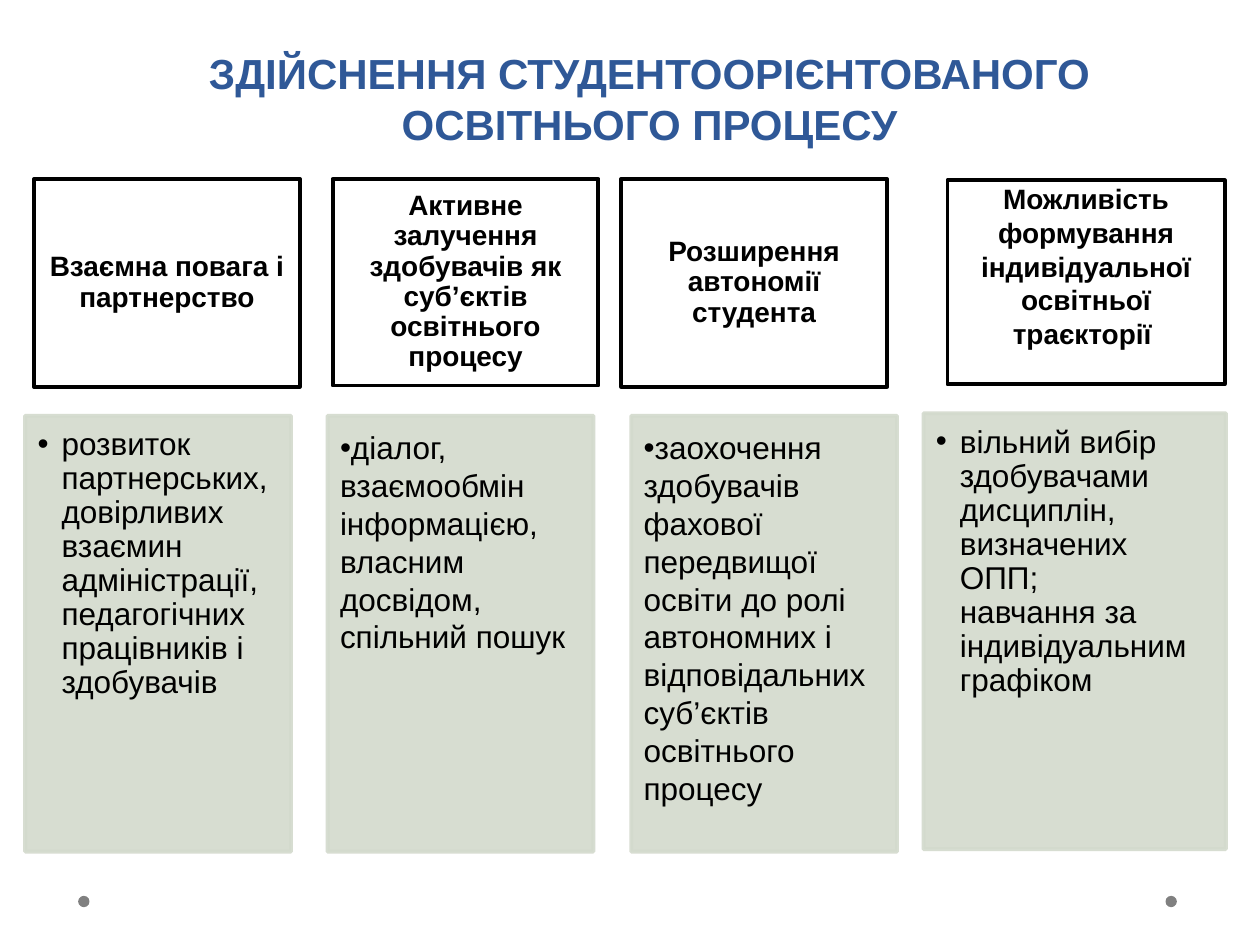
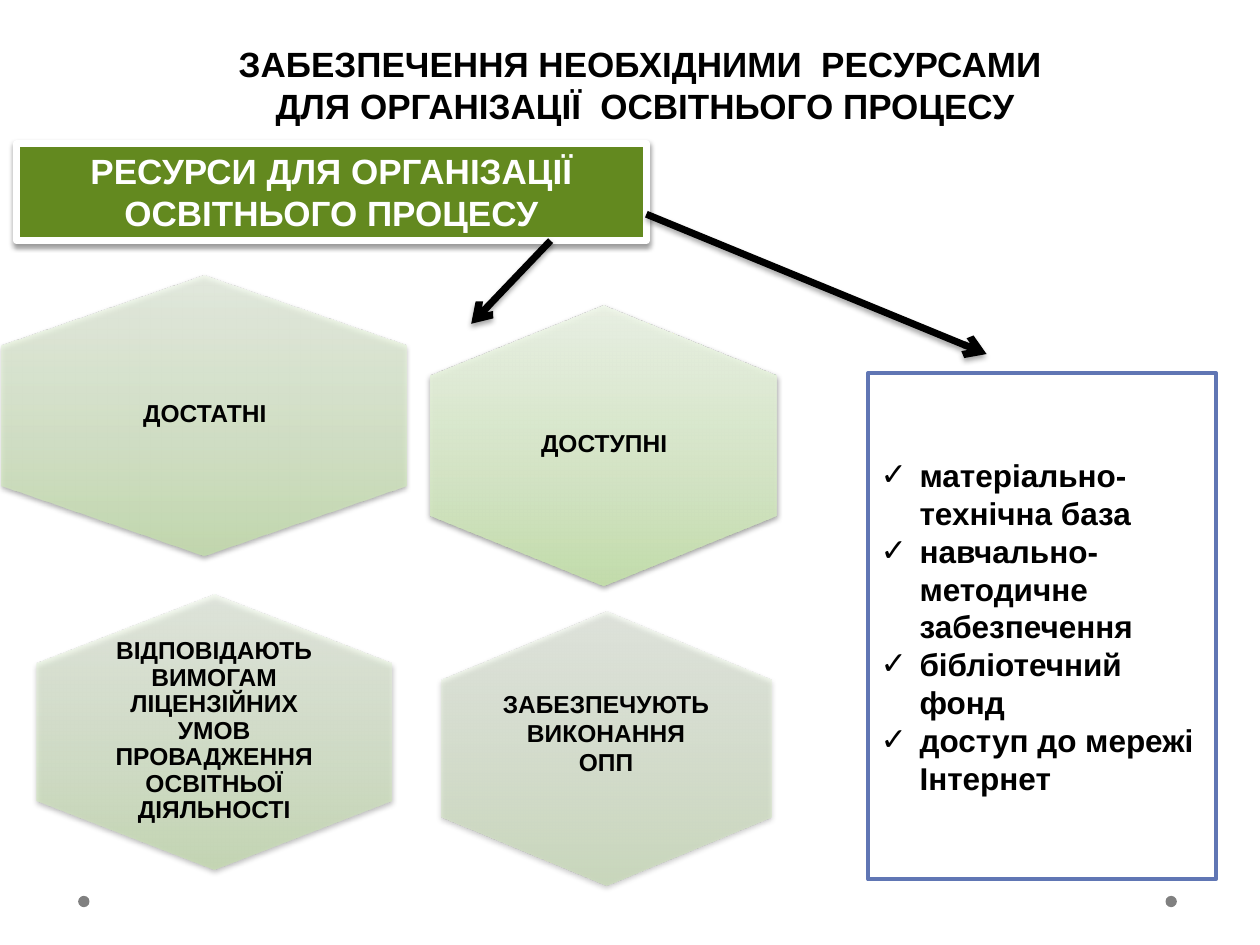
from pptx import Presentation
from pptx.dml.color import RGBColor
from pptx.enum.shapes import MSO_CONNECTOR, MSO_SHAPE
from pptx.enum.text import MSO_ANCHOR, PP_ALIGN
from pptx.oxml import parse_xml
from pptx.oxml.ns import nsdecls, qn
from pptx.util import Emu, Pt

RECT, ELLIPSE, HEXAGON = MSO_SHAPE.RECTANGLE, MSO_SHAPE.OVAL, MSO_SHAPE.HEXAGON
STRAIGHT = MSO_CONNECTOR.STRAIGHT
LEFT, CENTER = PP_ALIGN.LEFT, PP_ALIGN.CENTER
TOP, MIDDLE, BOTTOM = MSO_ANCHOR.TOP, MSO_ANCHOR.MIDDLE, MSO_ANCHOR.BOTTOM

PX = 9144
FONT = "Arial"
BLACK, WHITE, GREY = "000000", "FFFFFF", "808080"
TITLE_BLUE, BORDER_BLUE = "2F5897", "6076B4"
SAGE, BANNER_GREEN = "D3DACD", "63891F"
HEXAGON_STOPS = ((0, "C5E1AB"), (35, "D6E9C5"), (100, "EFF7E9"))
DEFAULT_INSETS = (10, 5, 10, 5)

PRINCIPLES = (
    dict(heading="Взаємна повага і партнерство",
         heading_box=(27, 142, 211, 165), body_box=(20, 330, 211, 346),
         body="розвиток партнерських, довірливих взаємин адміністрації, "
              "педагогічних працівників і здобувачів",
         body_format=dict(hang=19, spacing=0.9)),
    dict(heading="Активне залучення здобувачів як суб’єктів освітнього процесу",
         heading_box=(264, 142, 211, 164), body_box=(260, 330, 211, 346),
         body="діалог, взаємообмін інформацією, власним досвідом, спільний пошук"),
    dict(heading="Розширення автономії студента",
         heading_box=(493, 142, 211, 165), body_box=(501, 330, 211, 346),
         body="заохочення здобувачів фахової передвищої освіти до ролі "
              "автономних і відповідальних суб’єктів освітнього процесу"),
    dict(heading="Можливість формування індивідуальної освітньої траєкторії ",
         heading_box=(752, 143, 220, 162), body_box=(733, 328, 240, 346),
         heading_format=dict(spacing=1, insets=(10, 5, 10, 31)),
         body="вільний вибір здобувачами дисциплін, визначених ОПП;\v"
              "навчання за індивідуальним графіком",
         body_format=dict(hang=19, spacing=0.9)),
)

QUALITIES = (
    ("ДОСТУПНІ", (342, 242, 275, 222), 90, 46, dict(spacing=0.9)),
    ("ДОСТАТНІ", (2, 218, 321, 222), 77, 53, dict(spacing=0.9)),
    ("ВІДПОВІДАЮТЬ ВИМОГАМ ЛІЦЕНЗІЙНИХ УМОВ ПРОВАДЖЕННЯ ОСВІТНЬОЇ ДІЯЛЬНОСТІ",
     (29, 472, 282, 218), 63, 47, dict(spacing=0.9, insets=(6, 6, 6, 6))),
    ("ЗАБЕЗПЕЧУЮТЬ ВИКОНАННЯ ОПП",
     (350, 485, 262, 218), 50, 44, dict(insets=(0, 0, 0, 24))),
)

RESOURCES = ("матеріально-технічна база\nнавчально-методичне забезпечення\n"
             "бібліотечний фонд\nдоступ до мережі Інтернет")


def px(*lengths):
    return [Emu(length * PX) for length in lengths]


def rgb(color):
    return RGBColor.from_string(color)


def set_alpha(fill_parent, percent):
    for color in fill_parent.iter(qn("a:srgbClr")):
        color.append(parse_xml(f'<a:alpha {nsdecls("a")} val="{percent * 1000}"/>'))


def cast_shadow(effects, percent=38, distance=1.6):
    effects.append(parse_xml(
        f'<a:outerShdw {nsdecls("a")} blurRad="{Pt(3.1)}" dist="{Pt(distance)}" '
        f'dir="5400000" rotWithShape="0"><a:srgbClr val="{BLACK}">'
        f'<a:alpha val="{percent * 1000}"/></a:srgbClr></a:outerShdw>'))


def write_text(target, text, size=18, bold=False, color=BLACK, align=CENTER,
               anchor=TOP, insets=DEFAULT_INSETS, spacing=1, bullet=None, hang=0):
    frame = target.text_frame
    frame.word_wrap = True
    frame.vertical_anchor = anchor
    (frame.margin_left, frame.margin_top,
     frame.margin_right, frame.margin_bottom) = px(*insets)
    frame.text = text
    for paragraph in frame.paragraphs:
        paragraph.alignment = align
        paragraph.line_spacing = spacing
        if bullet:
            properties = paragraph._p.get_or_add_pPr()
            properties.set("marL", str(hang * PX))
            properties.set("indent", str(-hang * PX))
            properties.append(parse_xml(
                f'<a:buFont {nsdecls("a")} typeface="{FONT}"/>'))
            properties.append(parse_xml(
                f'<a:buChar {nsdecls("a")} char="{bullet}"/>'))
        for run in paragraph.runs:
            run.font.name = FONT
            run.font.size = Pt(size)
            run.font.bold = bold
            run.font.color.rgb = rgb(color)


def add_label(slide, box, text, **text_format):
    write_text(slide.shapes.add_textbox(*px(*box)), text, **text_format)


def add_panel(slide, box, kind=RECT, fill=WHITE, line=None, width=2.25):
    panel = slide.shapes.add_shape(kind, *px(*box))
    panel.shadow.inherit = False
    panel.fill.solid()
    panel.fill.fore_color.rgb = rgb(fill)
    if line:
        panel.line.color.rgb = rgb(line)
        panel.line.width = Pt(width)
    else:
        panel.line.fill.background()
    return panel


def add_base_slide(deck):
    slide = deck.slides.add_slide(deck.slide_layouts[6])
    for left in (62, 925):
        add_panel(slide, (left, 711, 9, 9), ELLIPSE, GREY)
    return slide


def add_principle(slide, heading, heading_box, body, body_box,
                  heading_format=None, body_format=None):
    heading_style = dict(size=16, bold=True, anchor=MIDDLE, spacing=0.9,
                         insets=(12, 7, 12, 7))
    heading_style.update(heading_format or {})
    write_text(add_panel(slide, heading_box, line=BLACK), heading, **heading_style)
    body_panel = add_panel(slide, body_box, fill=SAGE, line=SAGE)
    set_alpha(body_panel._element.spPr, 90)
    write_text(body_panel, body, align=LEFT, insets=(10, 10, 14, 16),
               bullet="•", **(body_format or {}))


def add_quality(slide, text, box, opacity, side_margin, text_format):
    left, top, width, height = box
    turn = (width - height) // 2
    hexagon = add_panel(slide, (left + turn, top - turn, height, width), HEXAGON)
    hexagon.rotation = 90
    stops = "".join(
        f'<a:gs pos="{position * 1000}"><a:srgbClr val="{color}"/></a:gs>'
        for position, color in HEXAGON_STOPS)
    gradient = parse_xml(
        f'<a:gradFill {nsdecls("a")} rotWithShape="0"><a:gsLst>{stops}</a:gsLst>'
        '<a:lin ang="16200000" scaled="0"/></a:gradFill>')
    set_alpha(gradient, opacity)
    properties = hexagon._element.spPr
    properties.replace(properties.find(qn("a:solidFill")), gradient)
    cast_shadow(properties.find(qn("a:effectLst")))
    label_height = height * 2 // 3
    label_box = (left + side_margin, top + (height - label_height) // 2,
                 width - 2 * side_margin, label_height)
    style = dict(size=14, bold=True, anchor=MIDDLE, insets=(0, 0, 0, 0))
    add_label(slide, label_box, text, **{**style, **text_format})


def add_arrow(slide, start, end):
    arrow = slide.shapes.add_connector(STRAIGHT, *px(*start, *end))
    arrow.line.color.rgb = rgb(BLACK)
    arrow.line.width = Pt(4)
    properties = arrow._element.spPr
    properties.find(qn("a:ln")).append(
        parse_xml(f'<a:tailEnd {nsdecls("a")} type="arrow"/>'))
    effects = parse_xml(f'<a:effectLst {nsdecls("a")}/>')
    cast_shadow(effects, percent=35, distance=1.8)
    properties.append(effects)


def add_banner(slide, box, text):
    banner = add_panel(slide, box, fill=BANNER_GREEN, line=WHITE, width=4)
    cast_shadow(banner._element.spPr.find(qn("a:effectLst")))
    write_text(banner, text, size=20, bold=True, color=WHITE)


def build_principles_slide(deck):
    slide = add_base_slide(deck)
    add_label(slide, (106, 21, 819, 102),
              "ЗДІЙСНЕННЯ СТУДЕНТООРІЄНТОВАНОГО ОСВІТНЬОГО ПРОЦЕСУ",
              size=24, bold=True, color=TITLE_BLUE, anchor=BOTTOM)
    for principle in PRINCIPLES:
        add_principle(slide, **principle)


def build_resources_slide(deck):
    slide = add_base_slide(deck)
    add_label(slide, (83, 29, 858, 77),
              "ЗАБЕЗПЕЧЕННЯ НЕОБХІДНИМИ  РЕСУРСАМИ \n"
              "ДЛЯ ОРГАНІЗАЦІЇ  ОСВІТНЬОГО ПРОЦЕСУ", size=20, bold=True)
    add_banner(slide, (13, 114, 500, 77),
               "РЕСУРСИ ДЛЯ ОРГАНІЗАЦІЇ ОСВІТНЬОГО ПРОЦЕСУ")
    for quality in QUALITIES:
        add_quality(slide, *quality)
    add_arrow(slide, (437, 191), (374, 257))
    add_arrow(slide, (513, 170), (783, 281))
    resource_list = add_panel(slide, (689, 296, 276, 402), line=BORDER_BLUE)
    write_text(resource_list, RESOURCES, bold=True, align=LEFT, anchor=MIDDLE,
               bullet="✓", hang=31)


def main():
    deck = Presentation()
    deck.slide_width, deck.slide_height = px(1000, 750)
    build_principles_slide(deck)
    build_resources_slide(deck)
    deck.save("out.pptx")


if __name__ == "__main__":
    main()
